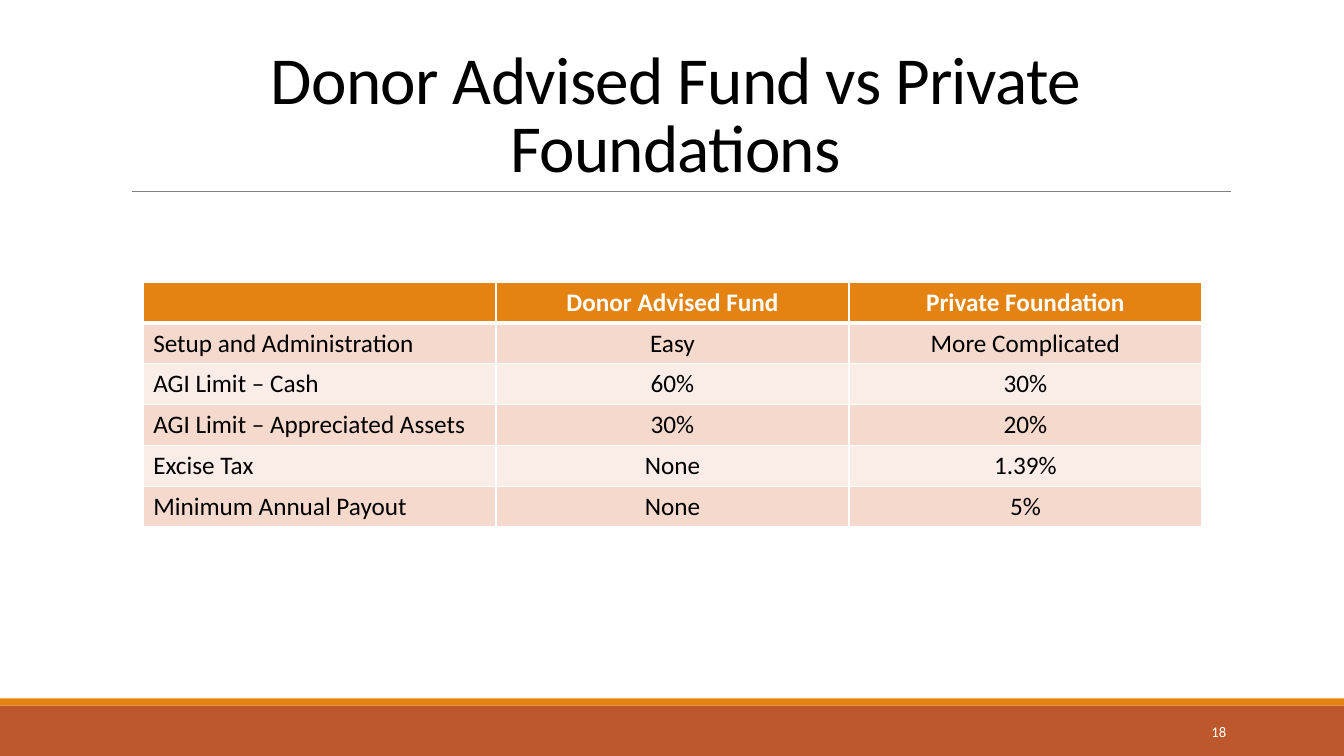
from lxml import etree
from pptx import Presentation
from pptx.dml import color
from pptx.enum import shapes, text
from pptx.oxml import ns
from pptx.util import Inches, Pt

ALIGN = text.PP_ALIGN
ANCHOR = text.MSO_ANCHOR
ORANGE, RUST, WHITE, BLACK, GRAY = "E48312", "BD582C", "FFFFFF", "000000", "808080"
BANDS = ("F5D9CC", "FAEDE7")

COMPARISON = [
    ("", "Donor Advised Fund", "Private Foundation"),
    ("Setup and Administration", "Easy", "More Complicated"),
    ("AGI Limit – Cash", "60%", "30%"),
    ("AGI Limit – Appreciated Assets", "30%", "20%"),
    ("Excise Tax", "None", "1.39%"),
    ("Minimum Annual Payout", "None", "5%"),
]


def rgb(value):
    return color.RGBColor.from_string(value)


def paint(fill, value):
    fill.solid()
    fill.fore_color.rgb = rgb(value)


class SlideBuilder:
    font_name = "Calibri"

    def __init__(self, slide):
        self.slide = slide

    def style(self, paragraph, size, ink, align, bold=False):
        paragraph.alignment = align
        font = paragraph.font
        font.name, font.size, font.bold = self.font_name, Pt(size), bold
        font.color.rgb = rgb(ink)

    def band(self, top, height, fill):
        band = self.slide.shapes.add_shape(
            shapes.MSO_SHAPE.RECTANGLE, 0, Inches(top), Inches(13.33), Inches(height))
        band.shadow.inherit = False
        paint(band.fill, fill)
        band.line.fill.background()

    def rule(self, left, right, y):
        rule = self.slide.shapes.add_connector(
            shapes.MSO_CONNECTOR.STRAIGHT, Inches(left), Inches(y), Inches(right), Inches(y))
        rule.line.color.rgb = rgb(GRAY)
        rule.line.width = Pt(0.5)
        etree.SubElement(rule._element.spPr, ns.qn("a:effectLst"))

    def label(self, box, words, size, ink, align, anchor, line_spacing=1.0, tracking=0):
        frame = self.slide.shapes.add_textbox(*map(Inches, box)).text_frame
        frame.word_wrap = True
        frame.vertical_anchor = anchor
        paragraph = frame.paragraphs[0]
        run = paragraph.add_run()
        run.text = words
        if tracking:
            run.font._element.set("spc", str(round(tracking * 100)))
        paragraph.line_spacing = line_spacing
        self.style(paragraph, size, ink, align)

    def border(self, cell, side, width):
        line = etree.SubElement(
            cell._tc.get_or_add_tcPr(), ns.qn(f"a:ln{side}"), w=str(Pt(width)))
        fill = etree.SubElement(line, ns.qn("a:solidFill"))
        etree.SubElement(fill, ns.qn("a:srgbClr"), val=WHITE)

    def table(self, box, rows):
        table = self.slide.shapes.add_table(
            len(rows), len(rows[0]), *map(Inches, box)).table
        for r, row in enumerate(rows):
            header = r == 0
            for c, words in enumerate(row):
                cell = table.cell(r, c)
                cell.text = words
                self.style(cell.text_frame.paragraphs[0], 18, WHITE if header else BLACK,
                           ALIGN.CENTER if header or c else ALIGN.LEFT, header)
                widths = {"L": 1, "R": 1, "T": 3 if r == 1 else 1, "B": 3 if header else 1}
                for side, width in widths.items():
                    self.border(cell, side, width)
                paint(cell.fill, ORANGE if header else BANDS[(r - 1) % 2])


def main():
    deck = Presentation()
    deck.slide_width, deck.slide_height = Inches(13.33), Inches(7.5)
    builder = SlideBuilder(deck.slides.add_slide(deck.slide_layouts[6]))
    builder.band(7, 0.5, RUST)
    builder.band(6.93, 0.07, ORANGE)
    builder.rule(1.31, 12.21, 1.9)
    builder.label((1.2, 0.31, 11, 1.59), "Donor Advised Fund vs Private Foundations",
                  48, BLACK, ALIGN.CENTER, ANCHOR.BOTTOM, 0.85, -0.5)
    builder.table((1.42, 2.8, 10.5, 2.43), COMPARISON)
    builder.label((10.83, 7.06, 1.43, 0.4), "18", 10.5, WHITE, ALIGN.RIGHT, ANCHOR.MIDDLE)
    deck.save("out.pptx")


if __name__ == "__main__":
    main()
